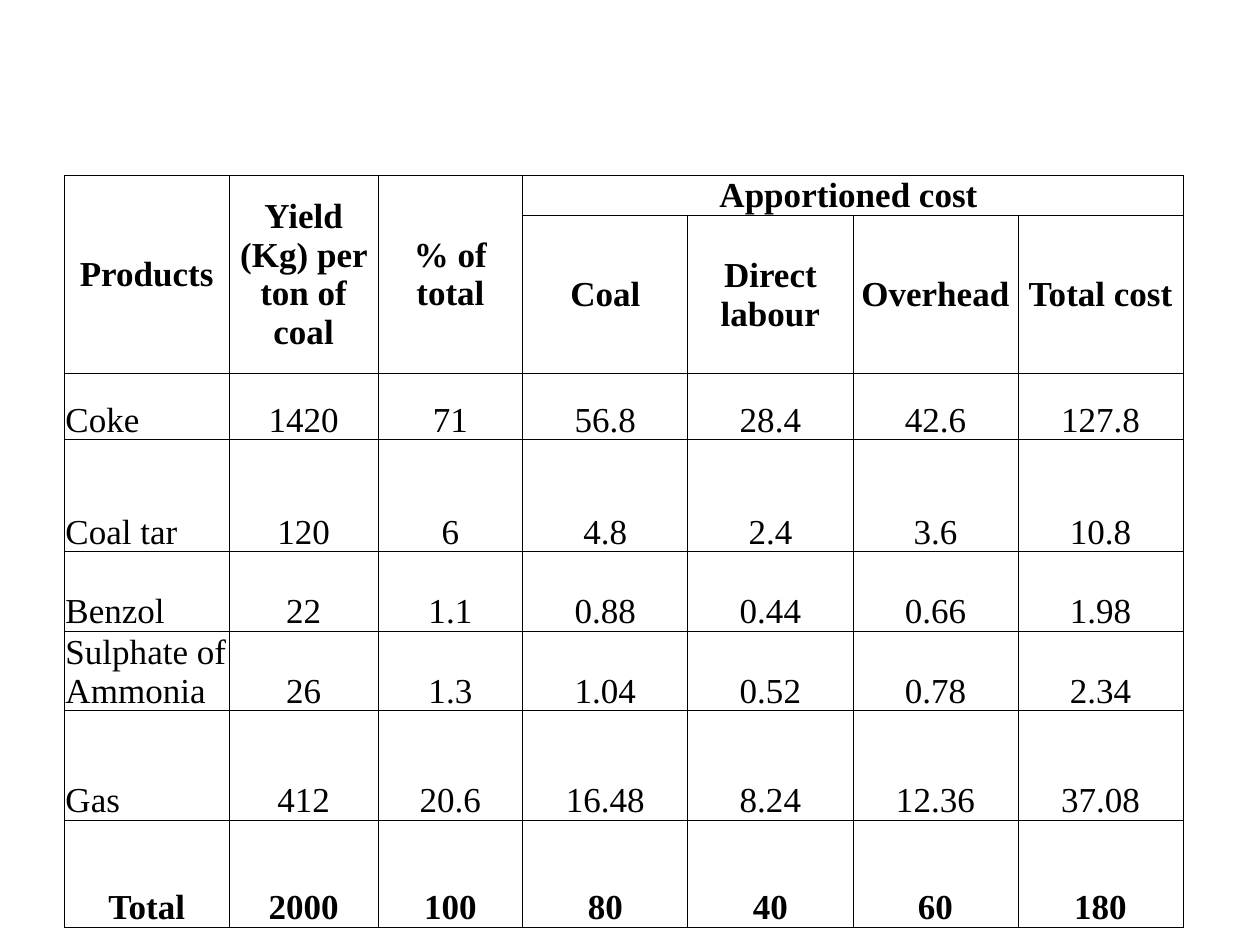
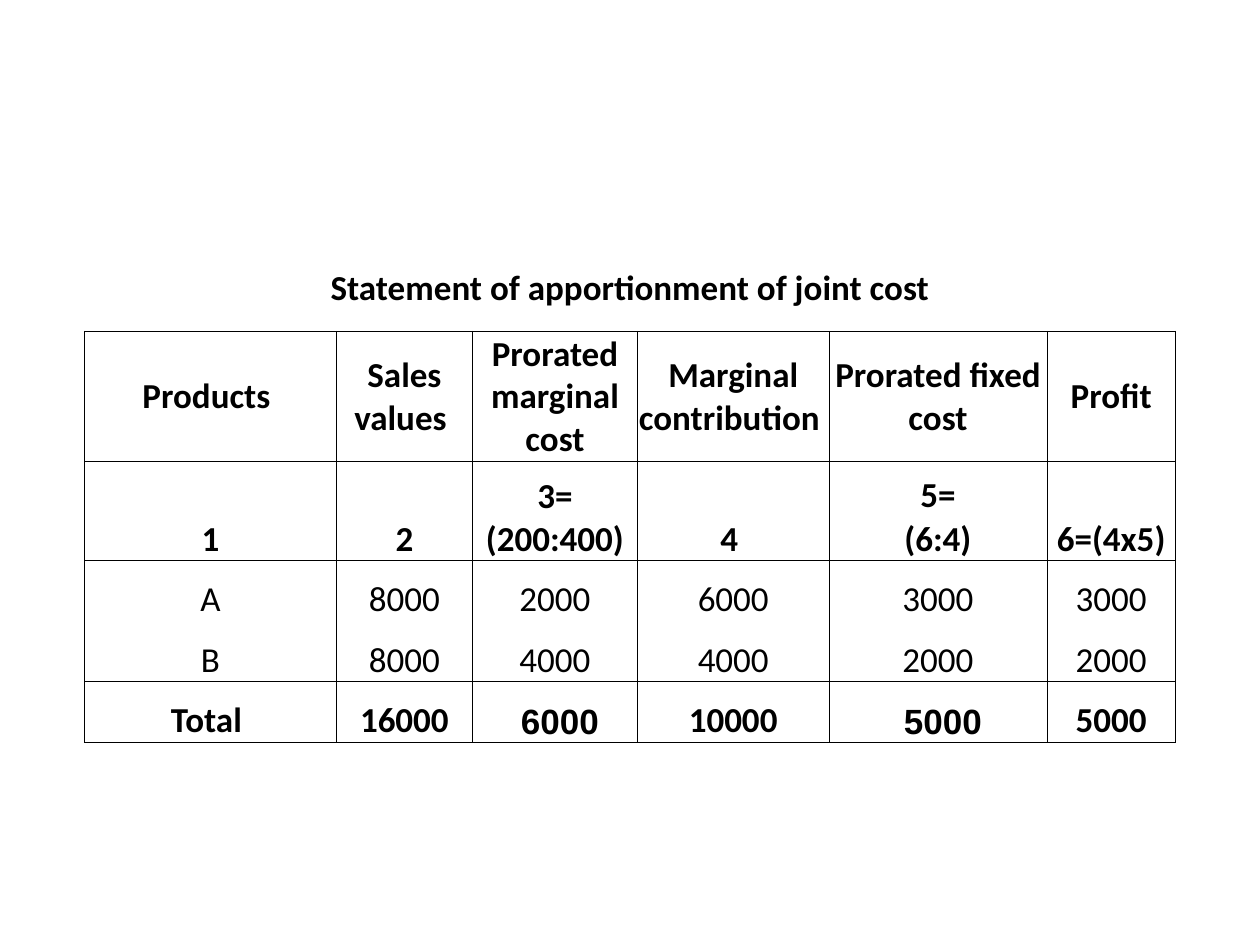
"""Build two slides with tables that apportion joint costs to products."""
from dataclasses import dataclass, field

from lxml.etree import SubElement
from pptx import Presentation
from pptx.dml.color import RGBColor
from pptx.enum.text import MSO_ANCHOR, PP_ALIGN
from pptx.oxml.ns import qn
from pptx.presentation import Presentation as Deck
from pptx.table import _Cell as Cell
from pptx.util import Inches, Pt

BLACK = "000000"
TEXT_SIZE = Pt(20)
BORDER_WIDTH = Pt(0.5)
BLANK_LAYOUT = 6


@dataclass(frozen=True)
class CostTable:
    left: float
    top: float
    font: str
    columns: list[float]
    heights: list[float]
    rows: list[list[str]]
    header_rows: set[int]
    regular_rows: set[int]
    merges: list[tuple[int, int, int, int]]
    open_below: set[tuple[int, int]]
    left_labels: bool = False
    unframed_rows: set[int] = field(default_factory=set)
    cell_fonts: dict[tuple[int, int], str] = field(default_factory=dict)


YIELD_TABLE = CostTable(
    left=0.51,
    top=1.39,
    font="Times New Roman",
    columns=[1.31, 1.18, 1.15] + [1.31] * 4,
    heights=[0.32, 1.25, 0.53, 0.48, 0.41, 0.63, 0.63, 0.87, 0.85],
    rows=[
        ["Products", "Yield (Kg) per ton of coal", "% of total", "Apportioned cost ", "", "", ""],
        ["", "", "", "Coal", "Direct labour", "Overhead", "Total cost"],
        ["Coke", "1420", "71", "56.8", "28.4", "42.6", "127.8"],
        ["Coal tar", "120", "6", "", "2.4", "3.6", "10.8"],
        ["", "", "", "4.8", "", "", ""],
        ["Benzol", "22", "1.1", "0.88", "0.44", "0.66", "1.98"],
        ["Sulphate of Ammonia", "26", "1.3", "1.04", "0.52", "0.78", "2.34"],
        ["Gas", "412", "20.6", "16.48", "8.24", "12.36", "37.08"],
        ["Total", "2000", "100", "80", "40", "60", "180"],
    ],
    header_rows={0, 1},
    regular_rows=set(range(2, 8)),
    merges=[(0, column, 1, column) for column in range(3)]
    + [(0, 3, 0, 6)]
    + [(3, column, 4, column) for column in (0, 1, 2, 4, 5, 6)],
    open_below={(3, 3)},
    left_labels=True,
)

STATEMENT_TABLE = CostTable(
    left=0.67,
    top=1.94,
    font="Calibri",
    columns=[2, 1.08, 1.31, 1.52, 1.73, 1.02],
    heights=[0.69, 1.03, 0.44, 0.35, 0.48, 0.48, 0.48],
    rows=[
        ["Statement of apportionment of joint cost", "", "", "", "", ""],
        ["Products ", "Sales values ", "Prorated marginal cost",
         "Marginal contribution ", "Prorated fixed cost", "Profit"],
        ["1", "2", "3=\n(200:400)", "4 ", "5=", "6=(4x5)"],
        ["", "", "", "", "(6:4)", ""],
        ["A", "8000", "2000", "6000", "3000", "3000"],
        ["B", "8000", "4000", "4000", "2000", "2000"],
        ["Total ", "16000", " 6000", "10000", " 5000", "5000"],
    ],
    header_rows={0, 1},
    regular_rows={4, 5},
    merges=[(0, 0, 0, 5)] + [(2, column, 3, column) for column in (0, 1, 2, 3, 5)],
    open_below={(2, 4)} | {(4, column) for column in range(6)},
    unframed_rows={0},
    cell_fonts={(6, 2): "Arial", (6, 4): "Arial"},
)


def color(value: str) -> RGBColor:
    """Turn a hex string into a colour."""
    return RGBColor.from_string(value)


def draw_borders(cell: Cell, hidden: set[str]) -> None:
    """Give a cell thin borders, leaving the hidden sides unpainted."""
    properties = cell._tc.get_or_add_tcPr()
    for side in "LRTB":
        line = SubElement(properties, qn(f"a:ln{side}"), w=str(BORDER_WIDTH))
        if side in hidden:
            SubElement(line, qn("a:noFill"))
        else:
            fill = SubElement(line, qn("a:solidFill"))
            SubElement(fill, qn("a:srgbClr"), val=BLACK)


def hidden_sides(design: CostTable, row: int, column: int) -> set[str]:
    """Find the sides of a cell that carry no border."""
    hidden = set("LRT") if row in design.unframed_rows else set()
    if (row, column) in design.open_below:
        hidden.add("B")
    if (row - 1, column) in design.open_below:
        hidden.add("T")
    return hidden


def write_cell(cell: Cell, design: CostTable, row: int, column: int) -> None:
    """Fill one cell with its formatted text."""
    cell.margin_left = cell.margin_right = cell.margin_top = Inches(0.01)
    cell.margin_bottom = 0
    is_header = row in design.header_rows
    cell.vertical_anchor = MSO_ANCHOR.MIDDLE if is_header else MSO_ANCHOR.BOTTOM
    cell.text_frame.text = design.rows[row][column]
    is_label = design.left_labels and column == 0 and row in design.regular_rows
    for paragraph in cell.text_frame.paragraphs:
        paragraph.alignment = PP_ALIGN.LEFT if is_label else PP_ALIGN.CENTER
        for run in paragraph.runs:
            run.font.name = design.cell_fonts.get((row, column), design.font)
            run.font.size = TEXT_SIZE
            run.font.bold = row not in design.regular_rows
            run.font.color.rgb = color(BLACK)


def add_cost_slide(presentation: Deck, design: CostTable) -> None:
    """Add a slide that holds one cost table."""
    slide = presentation.slides.add_slide(presentation.slide_layouts[BLANK_LAYOUT])
    shape = slide.shapes.add_table(
        len(design.rows), len(design.columns),
        Inches(design.left), Inches(design.top),
        Inches(sum(design.columns)), Inches(sum(design.heights)),
    )
    table = shape.table
    table.first_row = table.horz_banding = False
    for table_column, width in zip(table.columns, design.columns):
        table_column.width = Inches(width)
    for table_row, height in zip(table.rows, design.heights):
        table_row.height = Inches(height)
    for top, left, bottom, right in design.merges:
        table.cell(top, left).merge(table.cell(bottom, right))
    for row in range(len(design.rows)):
        for column in range(len(design.columns)):
            cell = table.cell(row, column)
            draw_borders(cell, hidden_sides(design, row, column))
            cell.fill.background()
            if not cell.is_spanned:
                write_cell(cell, design, row, column)


def main() -> None:
    """Build and save the presentation."""
    presentation = Presentation()
    presentation.slide_width = Inches(10)
    presentation.slide_height = Inches(7.5)
    for design in (YIELD_TABLE, STATEMENT_TABLE):
        add_cost_slide(presentation, design)
    presentation.save("out.pptx")


if __name__ == "__main__":
    main()
